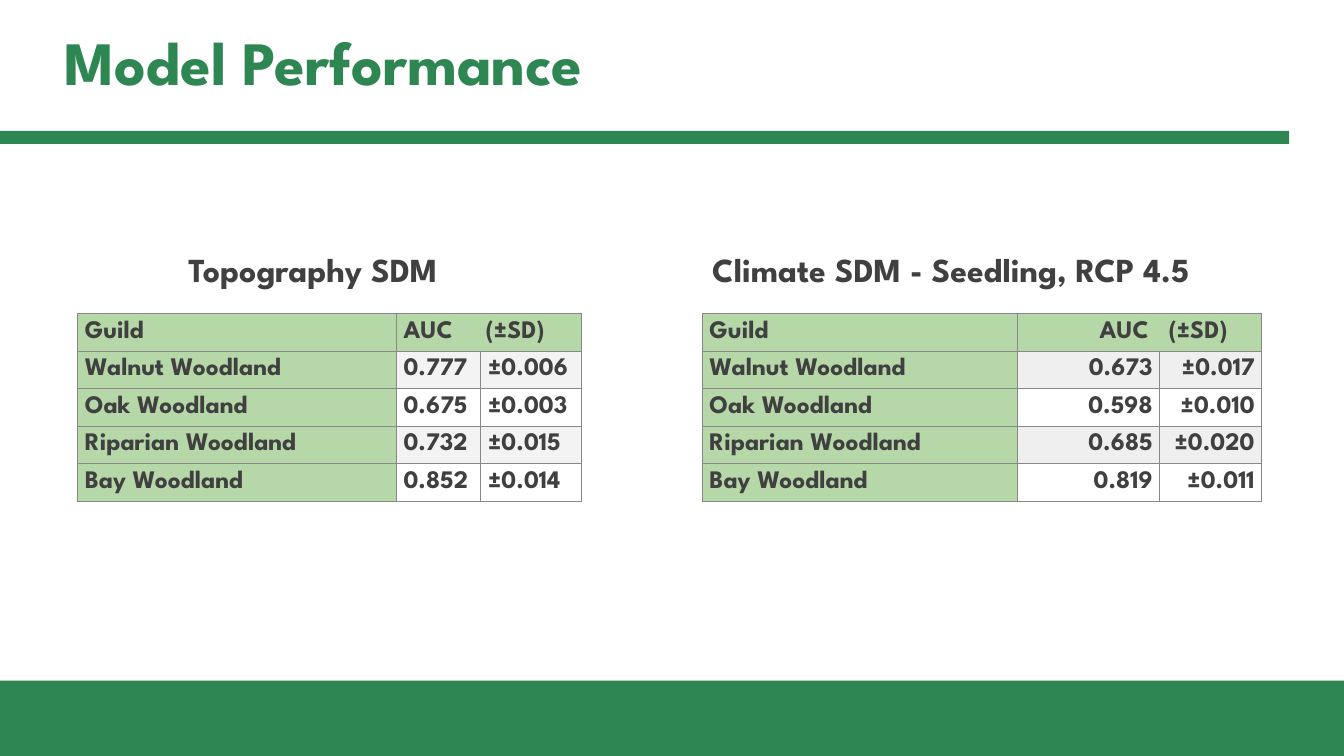
from dataclasses import dataclass

from lxml import etree
from pptx import Presentation
from pptx.dml.color import RGBColor
from pptx.enum import shapes, text
from pptx.oxml import ns
from pptx.util import Cm, Pt

FONT = "League Spartan"
GREEN = RGBColor(0x2E, 0x86, 0x52)
LIGHT_GREEN = RGBColor(0xB6, 0xD7, 0xA8)
DARK_GREY = RGBColor(0x40, 0x40, 0x40)
BORDER_GREY = RGBColor(0x88, 0x88, 0x88)
ROW_HEIGHT = 0.94
CELL_INSET = 0.18
TABLE_TOP = 7.9
GUILDS = ("Walnut Woodland", "Oak Woodland", "Riparian Woodland", "Bay Woodland")


@dataclass(frozen=True)
class Bar:
    top: float
    width: float
    height: float


@dataclass(frozen=True)
class Label:
    wording: str
    left: float
    top: float
    width: float
    height: float
    size: int
    color: RGBColor
    inset: float
    anchor: text.MSO_ANCHOR
    line_spacing: float = 1.0


@dataclass(frozen=True)
class ScoreTable:
    left: float
    columns: tuple[float, ...]
    scores: tuple[tuple[str, str], ...]
    band: RGBColor
    guild_anchor: text.MSO_ANCHOR
    score_align: text.PP_ALIGN
    header_inset: float
    header_tab: float


BARS = (Bar(17.15, 33.87, 1.9), Bar(3.3, 32.49, 0.33))
LABELS = (
    Label("Model Performance", 1.37, 1.07, 26.31, 1.17, 44, GREEN, 0.13,
          text.MSO_ANCHOR.MIDDLE, 0.9),
    Label("Topography SDM", 4.5, 6.02, 7.62, 1.09, 24, DARK_GREY, 0.25,
          text.MSO_ANCHOR.TOP),
    Label("Climate SDM - Seedling, RCP 4.5", 17.7, 6.02, 14.1, 1.09, 24, DARK_GREY, 0.25,
          text.MSO_ANCHOR.TOP),
)
TABLES = (
    ScoreTable(
        17.7, (7.95, 3.58, 2.57),
        (("0.673", "±0.017"), ("0.598", "±0.010"), ("0.685", "±0.020"), ("0.819", "±0.011")),
        RGBColor(0xEF, 0xEF, 0xEF), text.MSO_ANCHOR.MIDDLE, text.PP_ALIGN.RIGHT, 2.06, 1.74),
    ScoreTable(
        1.96, (8.03, 2.13, 2.54),
        (("0.777", "±0.006"), ("0.675", "±0.003"), ("0.732", "±0.015"), ("0.852", "±0.014")),
        RGBColor(0xF3, 0xF3, 0xF3), text.MSO_ANCHOR.BOTTOM, text.PP_ALIGN.LEFT, CELL_INSET, 2.07),
)


def add_run(paragraph, wording: str, size: int, color: RGBColor) -> None:
    run = paragraph.add_run()
    run.text = wording
    run.font.name = FONT
    run.font.size = Pt(size)
    run.font.bold = True
    run.font.color.rgb = color


def add_bar(slide, bar: Bar) -> None:
    shape = slide.shapes.add_shape(
        shapes.MSO_SHAPE.RECTANGLE, Cm(0), Cm(bar.top), Cm(bar.width), Cm(bar.height))
    shape.shadow.inherit = False
    shape.fill.solid()
    shape.fill.fore_color.rgb = GREEN
    shape.line.fill.background()


def add_label(slide, label: Label) -> None:
    box = slide.shapes.add_textbox(
        Cm(label.left), Cm(label.top), Cm(label.width), Cm(label.height))
    frame = box.text_frame
    frame.word_wrap = True
    frame.vertical_anchor = label.anchor
    frame.margin_left = frame.margin_right = Cm(0.25)
    frame.margin_top = frame.margin_bottom = Cm(label.inset)
    paragraph = frame.paragraphs[0]
    paragraph.line_spacing = label.line_spacing
    add_run(paragraph, label.wording, label.size, label.color)


def add_borders(cell) -> None:
    properties = cell._tc.get_or_add_tcPr()
    for side in ("a:lnL", "a:lnR", "a:lnT", "a:lnB"):
        line = etree.SubElement(properties, ns.qn(side), w=str(Pt(0.75)))
        fill = etree.SubElement(line, ns.qn("a:solidFill"))
        etree.SubElement(fill, ns.qn("a:srgbClr"), val=str(BORDER_GREY))


def add_tab_stop(paragraph, position: float) -> None:
    stops = etree.SubElement(paragraph._p.get_or_add_pPr(), ns.qn("a:tabLst"))
    etree.SubElement(stops, ns.qn("a:tab"), pos=str(Cm(position)), algn="l")


def format_cell(cell, fill: RGBColor | None, anchor: text.MSO_ANCHOR) -> None:
    add_borders(cell)
    if fill is None:
        cell.fill.background()
    else:
        cell.fill.solid()
        cell.fill.fore_color.rgb = fill
    cell.vertical_anchor = anchor
    cell.margin_left = cell.margin_right = Cm(CELL_INSET)
    cell.margin_top = cell.margin_bottom = Cm(CELL_INSET)


def add_score_table(slide, model: ScoreTable) -> None:
    rows = [("Guild", "AUC\t(±SD)", "")]
    rows += [(guild, *score) for guild, score in zip(GUILDS, model.scores)]
    table = slide.shapes.add_table(
        len(rows), len(model.columns), Cm(model.left), Cm(TABLE_TOP),
        Cm(sum(model.columns)), Cm(ROW_HEIGHT * len(rows))).table
    table.first_row = table.horz_banding = False
    for column, width in zip(table.columns, model.columns):
        column.width = Cm(width)
    for row_index, row in enumerate(rows):
        table.rows[row_index].height = Cm(ROW_HEIGHT)
        for column_index, wording in enumerate(row):
            cell = table.cell(row_index, column_index)
            is_guild = row_index > 0 and column_index == 0
            is_score = row_index > 0 and column_index > 0
            fill = LIGHT_GREEN
            if is_score:
                fill = model.band if row_index % 2 else None
            format_cell(cell, fill, model.guild_anchor if is_guild else text.MSO_ANCHOR.BOTTOM)
            paragraph = cell.text_frame.paragraphs[0]
            paragraph.alignment = model.score_align if is_score else text.PP_ALIGN.LEFT
            if wording:
                add_run(paragraph, wording, 18, DARK_GREY)
    header = table.cell(0, 1)
    header.margin_left = Cm(model.header_inset)
    add_tab_stop(header.text_frame.paragraphs[0], model.header_tab)
    header.merge(table.cell(0, 2))


def main() -> None:
    presentation = Presentation()
    presentation.slide_width = Cm(33.87)
    presentation.slide_height = Cm(19.05)
    slide = presentation.slides.add_slide(presentation.slide_layouts[6])
    for bar in BARS:
        add_bar(slide, bar)
    for model in TABLES:
        add_score_table(slide, model)
    for label in LABELS:
        add_label(slide, label)
    presentation.save("out.pptx")


if __name__ == "__main__":
    main()
